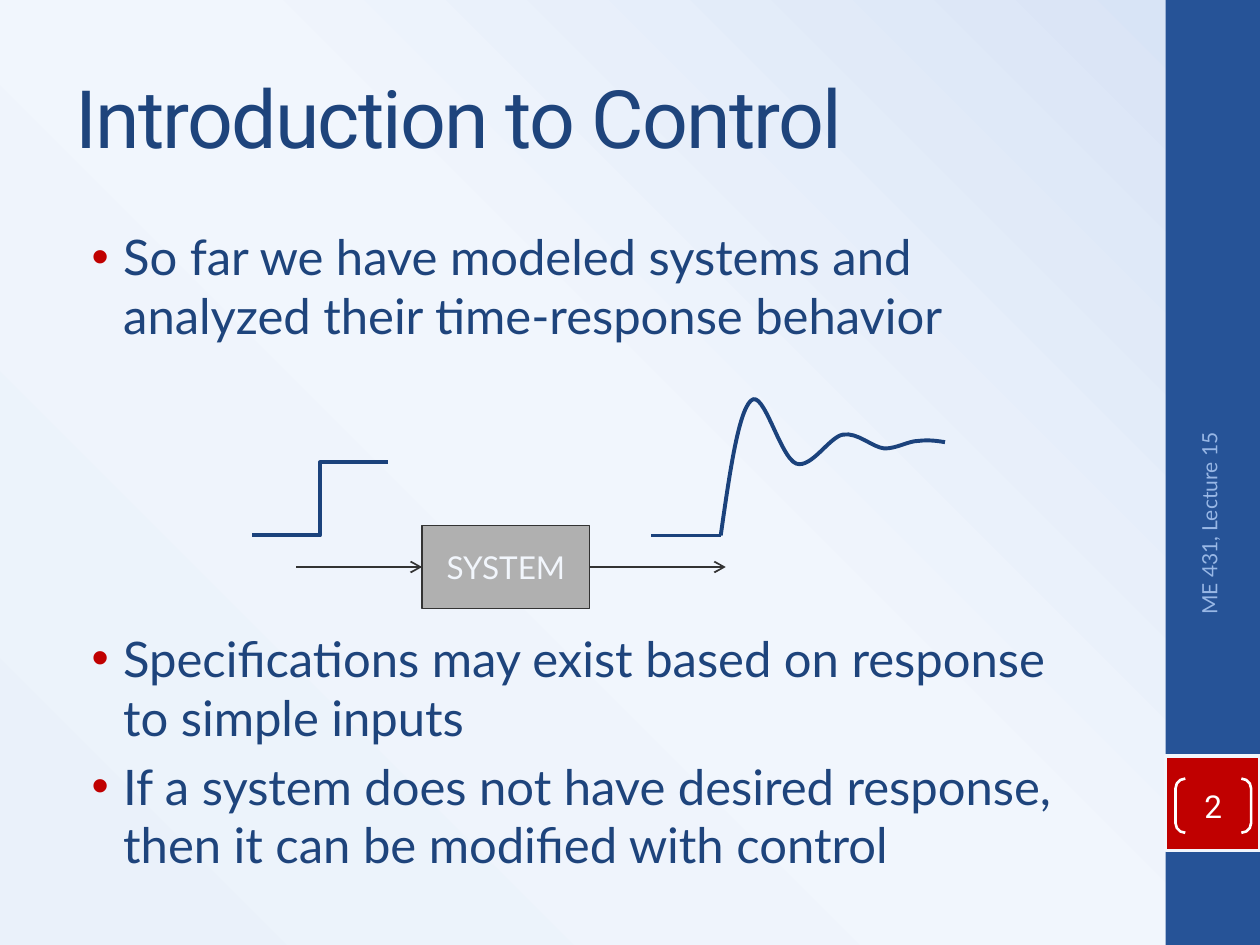
from dataclasses import dataclass

from lxml import etree
from pptx import Presentation
from pptx.dml.color import RGBColor
from pptx.enum.shapes import MSO_CONNECTOR, MSO_SHAPE
from pptx.enum.text import MSO_ANCHOR, PP_ALIGN
from pptx.oxml.ns import qn
from pptx.util import Inches, Pt

RECTANGLE, BRACKETS = MSO_SHAPE.RECTANGLE, MSO_SHAPE.DOUBLE_BRACKET
STRAIGHT, ELBOW = MSO_CONNECTOR.STRAIGHT, MSO_CONNECTOR.ELBOW
TOP, MIDDLE = MSO_ANCHOR.TOP, MSO_ANCHOR.MIDDLE
LEFT, CENTER, RIGHT = PP_ALIGN.LEFT, PP_ALIGN.CENTER, PP_ALIGN.RIGHT
LEFT_SIDE, RIGHT_SIDE = 1, 3

NAVY, SIGNAL, RED, PALE, DARK = "1E447C", "1B427C", "C00000", "F2F6FC", "333333"
BODY_SIZE = 28
PARAGRAPH_GAP = 0.2 * BODY_SIZE
DIAGRAM_GAP = 162.4  # room for the diagram between the first two bullets


@dataclass
class Style:
    size: float
    color: str
    font: str = "Lato"
    align: PP_ALIGN = LEFT
    anchor: MSO_ANCHOR = MIDDLE


@dataclass
class Bullet:
    text: str
    space_before: float = PARAGRAPH_GAP


BULLETS = [
    Bullet("So far we have modeled systems and analyzed their time-response behavior"),
    Bullet("Specifications may exist based on response to simple inputs", DIAGRAM_GAP),
    Bullet("If a system does not have desired response, then it can be modified with control"),
]

# Start of the response, then two control points and an end point per curve
RESPONSE_START = (5.72, 4.25)
RESPONSE_CURVES = [
    (5.79, 3.76), (5.86, 3.27), (5.96, 3.18),
    (6.06, 3.08), (6.19, 3.63), (6.32, 3.68),
    (6.44, 3.72), (6.58, 3.47), (6.69, 3.45),
    (6.81, 3.43), (6.92, 3.55), (7.02, 3.56),
    (7.12, 3.56), (7.21, 3.50), (7.29, 3.50),
    (7.37, 3.49), (7.44, 3.50), (7.50, 3.51),
]


def rgb(color: str) -> RGBColor:
    return RGBColor.from_string(color)


def set_line(shape, color: str, width: float) -> None:
    shape.line.color.rgb = rgb(color)
    shape.line.width = Pt(width)


def write(shape, texts: list[str], style: Style) -> None:
    frame = shape.text_frame
    frame.word_wrap = True
    frame.vertical_anchor = style.anchor
    frame.text = "\n".join(texts)
    for para in frame.paragraphs:
        para.alignment = style.align
        for span in para.runs:
            span.font.size = Pt(style.size)
            span.font.name = style.font
            span.font.color.rgb = rgb(style.color)


def add_text(page, place: tuple, texts: list[str], style: Style):
    box = page.shapes.add_textbox(*map(Inches, place))
    write(box, texts, style)
    return box


def add_block(page, kind: MSO_SHAPE, place: tuple, fill: str = "", line: str = "", width: float = 1):
    block = page.shapes.add_shape(kind, *map(Inches, place))
    block.shadow.inherit = False
    if fill:
        block.fill.solid()
        block.fill.fore_color.rgb = rgb(fill)
    else:
        block.fill.background()
    if line:
        set_line(block, line, width)
    else:
        block.line.fill.background()
    return block


def add_line(shapes, start: tuple, end: tuple, color: str, width: float, kind=STRAIGHT, arrow: bool = False):
    line = shapes.add_connector(kind, *map(Inches, start + end))
    set_line(line, color, width)
    properties = line._element.spPr
    etree.SubElement(properties, qn("a:effectLst"))
    if arrow:
        etree.SubElement(properties.find(qn("a:ln")), qn("a:tailEnd"), type="arrow")
    return line


def add_curve(shapes, start: tuple, points: list[tuple], color: str, width: float) -> None:
    builder = shapes.build_freeform(*map(Inches, start))
    builder.add_line_segments([(Inches(x), Inches(y)) for x, y in points], close=False)
    curve = builder.convert_to_shape()
    curve.shadow.inherit = False
    curve.fill.background()
    set_line(curve, color, width)
    # Gather each three straight segments into one Bezier segment
    outline = curve._element.find(".//" + qn("a:path"))
    segments = outline.findall(qn("a:lnTo"))
    for first in range(0, len(segments), 3):
        bezier = etree.SubElement(outline, qn("a:cubicBezTo"))
        for segment in segments[first:first + 3]:
            bezier.append(segment[0])
            outline.remove(segment)


def set_background(page) -> None:
    fill = page.background.fill
    fill.gradient()
    gradient = page._element.find(".//" + qn("a:gradFill"))
    for child in list(gradient):
        gradient.remove(child)
    stops = etree.SubElement(gradient, qn("a:gsLst"))
    for position, color in ((0, "EAF1FA"), (52, "F1F6FD"), (100, "D6E2F5")):
        stop = etree.SubElement(stops, qn("a:gs"), pos=str(position * 1000))
        etree.SubElement(stop, qn("a:srgbClr"), val=color)
    circle = etree.SubElement(gradient, qn("a:path"), path="circle")
    etree.SubElement(circle, qn("a:fillToRect"), l="0", t="100000", r="100000", b="0")


def add_bullets(page, place: tuple, bullets: list[Bullet]) -> None:
    box = add_text(page, place, [bullet.text for bullet in bullets], Style(BODY_SIZE, NAVY, anchor=TOP))
    for para, bullet in zip(box.text_frame.paragraphs, bullets):
        para.space_before = Pt(bullet.space_before)
        properties = para._p.get_or_add_pPr()
        properties.set("marL", str(Inches(0.38)))
        properties.set("indent", str(Inches(-0.25)))
        color = etree.SubElement(properties, qn("a:buClr"))
        etree.SubElement(color, qn("a:srgbClr"), val=RED)
        etree.SubElement(properties, qn("a:buFont"), typeface="Arial")
        etree.SubElement(properties, qn("a:buChar"), char="•")


def add_sidebar(page) -> None:
    add_block(page, RECTANGLE, (9.25, 0, 0.75, 7.5), "265397")
    add_block(page, RECTANGLE, (9.25, 6, 0.75, 0.75), RED, PALE, 2)
    footer = add_text(page, (8.3, 4.43, 2.59, 0.4), ["ME 431, Lecture 15"], Style(12, "98B7E5", align=RIGHT))
    footer.rotation = 270
    number = add_block(page, BRACKETS, (9.33, 6.18, 0.6, 0.43), line="FFFFFF", width=1.5)
    number.adjustments[0] = 0.18
    frame = number.text_frame
    frame.margin_left = frame.margin_right = frame.margin_top = frame.margin_bottom = 0
    write(number, ["2"], Style(18, "FFFFFF", "Roboto", CENTER))


def add_diagram(page) -> None:
    system = add_block(page, RECTANGLE, (3.35, 4.17, 1.33, 0.66), "B0B0B0", DARK)
    write(system, ["SYSTEM"], Style(18, PALE, align=CENTER))
    arrow_in = add_line(page.shapes, (2.35, 4.5), (3.35, 4.5), DARK, 1, arrow=True)
    arrow_in.end_connect(system, LEFT_SIDE)
    arrow_out = add_line(page.shapes, (4.68, 4.5), (5.76, 4.5), DARK, 1, arrow=True)
    arrow_out.begin_connect(system, RIGHT_SIDE)

    # Step input and its response
    add_line(page.shapes, (2, 4.25), (3.08, 3.67), SIGNAL, 2.25, ELBOW)
    response = page.shapes.add_group_shape()
    add_curve(response.shapes, RESPONSE_START, RESPONSE_CURVES, SIGNAL, 2.25)
    add_line(response.shapes, (5.17, 4.25), RESPONSE_START, SIGNAL, 2.25)


def main() -> None:
    deck = Presentation()
    deck.slide_width, deck.slide_height = Inches(10), Inches(7.5)
    page = deck.slides.add_slide(deck.slide_layouts[6])
    set_background(page)
    add_sidebar(page)

    # Title and body
    title = add_text(page, (0.5, 0.3, 8.33, 1.25), ["Introduction to Control"], Style(46, NAVY, "Roboto"))
    title.text_frame.paragraphs[0].runs[0].font._element.set("spc", "-100")
    add_bullets(page, (0.5, 1.75, 8.33, 5.25), BULLETS)

    add_diagram(page)
    deck.save("out.pptx")


if __name__ == "__main__":
    main()
